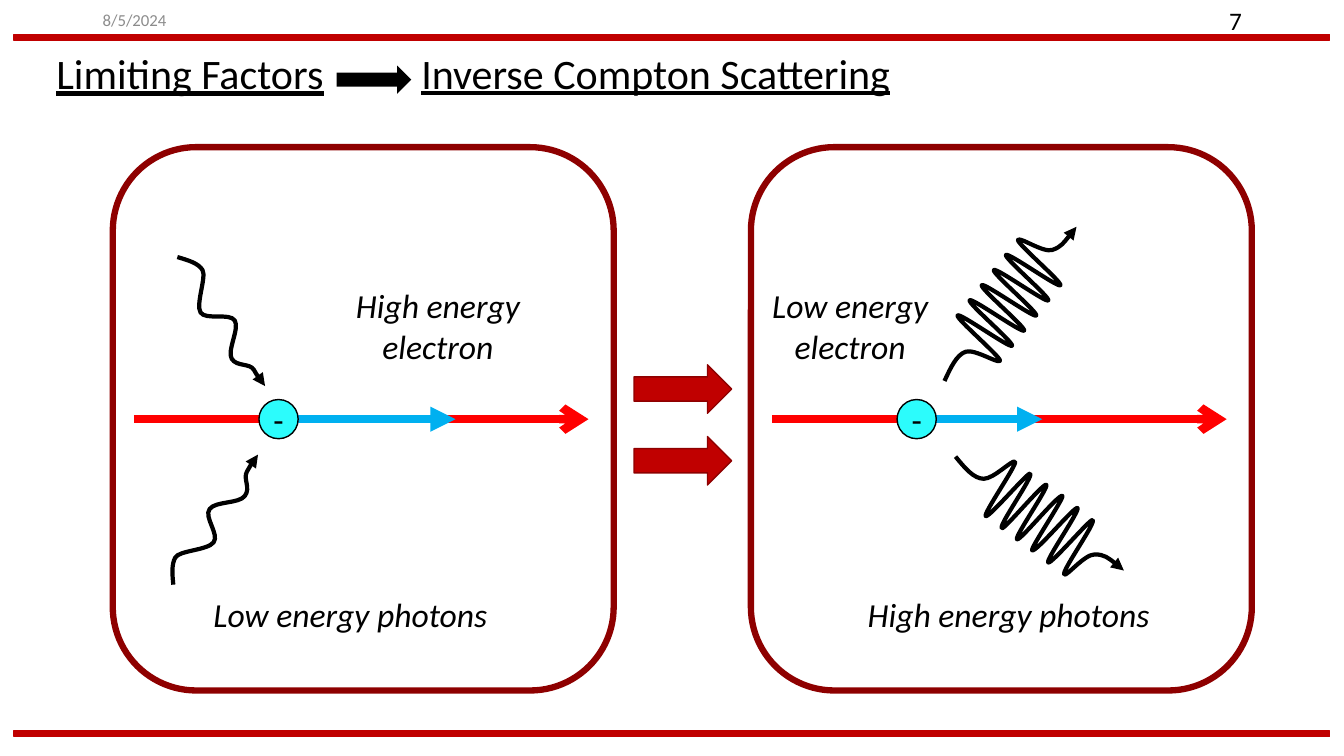
from lxml.etree import SubElement as Sub
from pptx import Presentation
from pptx.dml.color import RGBColor
from pptx.enum.shapes import MSO_CONNECTOR as Link, MSO_SHAPE as Kind
from pptx.enum.text import MSO_ANCHOR as Anchor, MSO_AUTO_SIZE as Fit, PP_ALIGN as Align
from pptx.oxml.ns import qn
from pptx.util import Pt

hue = RGBColor.from_string
deck = Presentation()
deck.slide_width, deck.slide_height = Pt(960), Pt(540)
slide = deck.slides.add_slide(deck.slide_layouts[5])
shapes = slide.shapes


def write(box, text, size, align=Align.LEFT, anchor=Anchor.TOP, color="000000", wrap=False):
    frame = box.text_frame
    frame.auto_size = Fit.NONE
    frame.word_wrap = wrap
    frame.vertical_anchor = anchor
    frame.text = text
    para = frame.paragraphs[0]
    para.alignment = align
    para.font.name = "Calibri"
    para.font.size = Pt(size)
    para.font.color.rgb = hue(color)
    return para.font


def stroke(item, color, width, head):
    item.line.color.rgb = hue(color)
    item.line.width = Pt(width)
    props = item._element.spPr
    Sub(props.find(qn("a:ln")), qn("a:tailEnd"), type=head)
    Sub(props, qn("a:effectLst"))


title = shapes.title
title.left, title.top, title.width, title.height = Pt(33), Pt(30.2), Pt(207.4), Pt(44)
topic = shapes.add_textbox(Pt(293.8), Pt(30.2), Pt(353.5), Pt(44))
for box, text in [(title, "Limiting Factors"), (topic, "Inverse Compton Scattering")]:
    write(box, text, 30).underline = True

date = shapes.add_textbox(Pt(66.2), 0, Pt(216), Pt(28.8))
write(date, "8/5/2024", 12, anchor=Anchor.MIDDLE, color="8C8C8C")
number = shapes.add_textbox(Pt(678.2), 0, Pt(216), Pt(28.8))
write(number, "7", 18, Align.RIGHT, Anchor.MIDDLE)

panels = [(80.6, 244.8), (536.4, 208.1)]
level = 299.4
for left, reach in panels:
    for start, end, color, head in [
        (15.1, 339.8, "FF0000", "arrow"),
        (132.5, reach, "00B0F0", "triangle"),
    ]:
        beam = shapes.add_connector(
            Link.STRAIGHT, Pt(left + start), Pt(level), Pt(left + end), Pt(level)
        )
        stroke(beam, color, 6, head)

parts = [(Kind.RIGHT_ARROW, 240.5, 46.8, 53.3, 20.2, "000000", None, 0, "")]
for top in (24.5, 522):
    parts.append((Kind.RECTANGLE, 10.1, top, 939.6, 4.3, "C00000", "C00000", 1, ""))
for top in (260.6, 311.8):
    parts.append((Kind.RIGHT_ARROW, 452.9, top, 69.8, 34.6, "C00000", "8E0000", 1, ""))
for left, reach in panels:
    parts += [
        (Kind.ROUNDED_RECTANGLE, left, 105.1, 357.8, 388.1, None, "8E0000", 4.5, ""),
        (Kind.OVAL, left + 104.4, level - 14, 28, 28, "2CFCFC", "000000", 1, "-"),
    ]
for kind, left, top, width, height, fill, line, weight, text in parts:
    part = shapes.add_shape(kind, Pt(left), Pt(top), Pt(width), Pt(height))
    part.shadow.inherit = False
    for paint, color in [(part.fill, fill), (part.line.fill, line)]:
        if color:
            paint.solid()
            paint.fore_color.rgb = hue(color)
        else:
            paint.background()
    if line:
        part.line.width = Pt(weight)
    if text:
        write(part, text, 24, Align.CENTER, Anchor.MIDDLE)

waves = [
    (12, (937, 378), (958, 349), (992, 358), (950, 313), (1044, 248), (1068, 225),
     (12, -15), (9, -3), (2, -3)),
    (12, (948, 453), (976, 475), (1007, 458), (978, 512), (1086, 550), (1115, 566),
     (15.5, 11.5), (10, 0), (3, 2)),
    (3, (172, 580), (174, 553), (212, 538), (208, 505), (245, 468), (256, 451),
     (31, -46), (4, -7), (6, -8)),
    (3, (176, 255), (201, 268), (199, 310), (233, 318), (252, 367), (263, 383),
     (31, 46), (4, 7), (5, 8)),
]
for count, start, first, crest, dip, last, end, step, edge, bend in waves:
    knots = [(first, edge)]
    for i in range(count):
        x, y = (crest, dip)[i % 2]
        knots.append(((x + i // 2 * step[0], y + i // 2 * step[1]), bend))
    knots.append((last, edge))
    dots = []
    for (x, y), (dx, dy) in knots:
        dots += [(x - dx, y - dy), (x, y), (x + dx, y + dy)]
    enter = [(a + b) / 2 for a, b in zip(start, dots[0])]
    leave = [(a + b) / 2 for a, b in zip(end, dots[-1])]

    pen = shapes.build_freeform(*start, scale=Pt(0.72))
    pen.add_line_segments([enter, *dots, leave, end], close=False)
    wave = pen.convert_to_shape()
    wave.fill.background()
    track = wave._element.spPr.find(".//" + qn("a:path"))
    legs = track.findall(qn("a:lnTo"))
    for i in range(0, len(legs), 3):
        curve = Sub(track, qn("a:cubicBezTo"))
        for leg in legs[i:i + 3]:
            curve.append(leg[0])
            track.remove(leg)
    stroke(wave, "000000", 3, "triangle")

for text, left, width in [
    ("Low energy photons", 145.4, 212.4),
    ("High energy photons", 612.7, 218.2),
]:
    label = shapes.add_textbox(Pt(left), Pt(420.5), Pt(width), Pt(36))
    write(label, text, 24).italic = True
for text, left in [("High energy electron", 239), ("Low energy electron", 533.5)]:
    label = shapes.add_textbox(Pt(left), Pt(200.2), Pt(147.6), Pt(65.5))
    write(label, text, 24, Align.CENTER, wrap=True).italic = True

deck.save("out.pptx")
